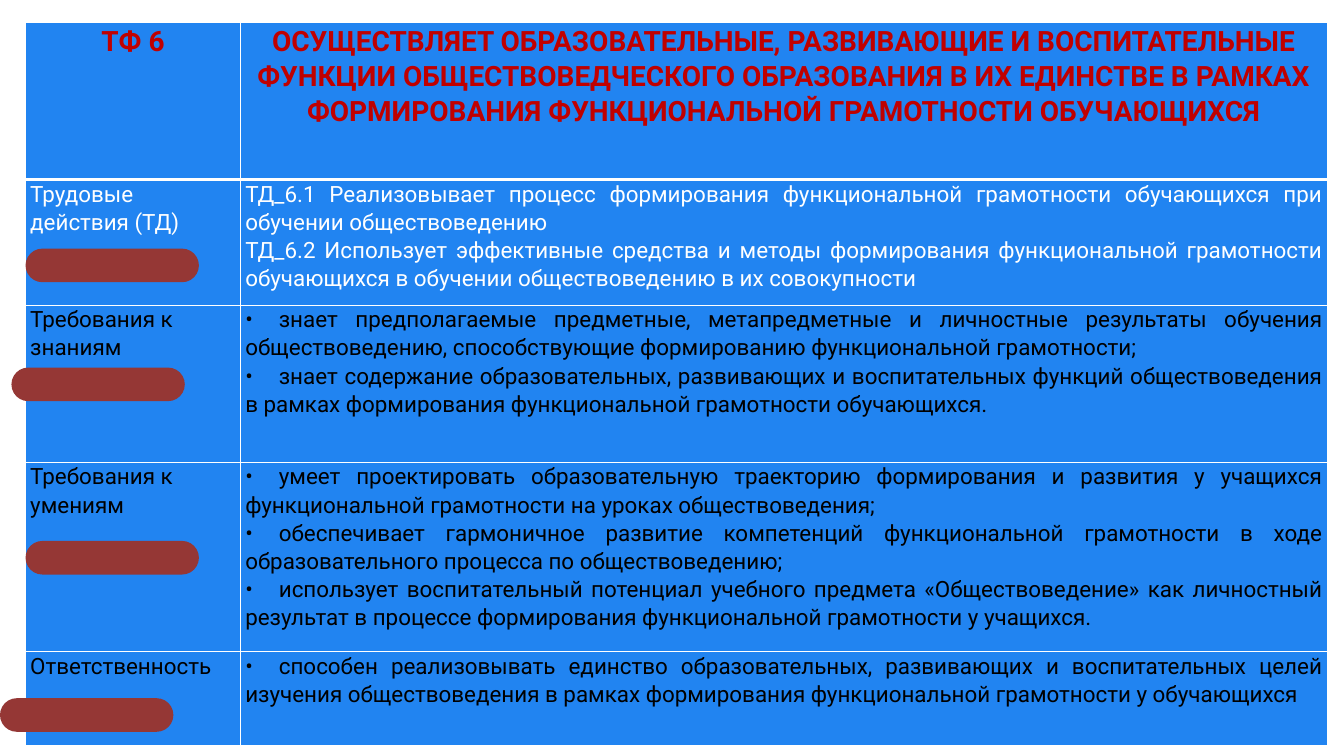
"""Build a one-slide table of the requirements for labour function 6."""
from lxml.etree import SubElement
from pptx import Presentation
from pptx.dml.color import RGBColor
from pptx.enum.shapes import MSO_SHAPE
from pptx.enum.text import PP_ALIGN
from pptx.oxml.ns import qn
from pptx.util import Inches, Pt

THEME = {
    "font": "Roboto", "head": 30, "body": 24,
    "cell": "2184F1", "line": "FFFFFF", "pill": "953735",
    "title": "C00000", "light": "FFFFFF", "dark": "000000",
}

HEAD = (
    "ТФ 6",
    "ОСУЩЕСТВЛЯЕТ ОБРАЗОВАТЕЛЬНЫЕ, РАЗВИВАЮЩИЕ И ВОСПИТАТЕЛЬНЫЕ ФУНКЦИИ "
    "ОБЩЕСТВОВЕДЧЕСКОГО ОБРАЗОВАНИЯ В ИХ ЕДИНСТВЕ В РАМКАХ ФОРМИРОВАНИЯ "
    "ФУНКЦИОНАЛЬНОЙ ГРАМОТНОСТИ ОБУЧАЮЩИХСЯ",
)
ACTIONS = ("Трудовые действия (ТД)", [
    "ТД_6.1 Реализовывает процесс формирования функциональной грамотности "
    "обучающихся при обучении обществоведению",
    "ТД_6.2 Использует эффективные средства и методы формирования функциональной "
    "грамотности обучающихся в обучении обществоведению в их совокупности",
])
REQUIREMENTS = [
    ("Требования к знаниям", [
        "знает предполагаемые предметные, метапредметные и личностные результаты обучения "
        "обществоведению, способствующие формированию функциональной грамотности;",
        "знает содержание образовательных, развивающих и воспитательных функций "
        "обществоведения в рамках формирования функциональной грамотности обучающихся.",
    ]),
    ("Требования к умениям", [
        "умеет проектировать образовательную траекторию формирования и развития у учащихся "
        "функциональной грамотности на уроках обществоведения;",
        "обеспечивает гармоничное развитие компетенций функциональной грамотности в ходе "
        "образовательного процесса по обществоведению;",
        "использует воспитательный потенциал учебного предмета «Обществоведение» как "
        "личностный результат в процессе формирования функциональной грамотности у учащихся.",
    ]),
    ("Ответственность", [
        "способен реализовывать единство образовательных, развивающих и воспитательных целей "
        "изучения обществоведения в рамках формирования функциональной грамотности у обучающихся",
    ]),
]
COLS = [3.2, 16.17]
ROWS = [2.33, 1.87, 2.34, 2.82, 1.39]
PILLS = [(0.38, 3.7), (0.38, 8.05), (0, 10.39), (0.17, 5.47)]
PILL_SIZE = (2.58, 0.5)


def rgb(name):
    """Return a theme colour."""
    return RGBColor.from_string(THEME[name])


def write(tf, paras, size="body", color="dark", bold=False, align=PP_ALIGN.LEFT):
    """Fill a text frame with one paragraph per string."""
    for i, text in enumerate(paras):
        p = tf.paragraphs[0] if i == 0 else tf.add_paragraph()
        p.alignment, p.line_spacing = align, 1.07
        r = p.add_run()
        r.text = text
        r.font.name, r.font.size, r.font.bold = THEME["font"], Pt(THEME[size]), bold
        r.font.color.rgb = rgb(color)


def style_cell(cell, bottom=1, top=1):
    """Set the margins, borders and fill of a cell."""
    cell.margin_left = cell.margin_right = Inches(0.07)
    cell.margin_top = cell.margin_bottom = 0
    tcPr = cell._tc.get_or_add_tcPr()
    for side, width in (("L", 1), ("R", 1), ("T", top), ("B", bottom)):
        ln = SubElement(tcPr, qn(f"a:ln{side}"), w=str(Pt(width)))
        fill = SubElement(ln, qn("a:solidFill"))
        SubElement(fill, qn("a:srgbClr"), val=THEME["line"])
    cell.fill.solid()
    cell.fill.fore_color.rgb = rgb("cell")


def add_grid(s):
    """Add the table with its heading, actions and requirements."""
    table = s.shapes.add_table(len(ROWS), len(COLS), Inches(0.38), Inches(0.34),
                               Inches(sum(COLS)), Inches(sum(ROWS))).table
    table.horz_banding = False
    for col, width in zip(table.columns, COLS):
        col.width = Inches(width)
    for i, (row, height) in enumerate(zip(table.rows, ROWS)):
        row.height = Inches(height)
        for cell in row.cells:
            style_cell(cell, bottom=3 if i == 0 else 1, top=3 if i == 1 else 1)
    for j, text in enumerate(HEAD):
        write(table.cell(0, j).text_frame, [text], size="head", color="title",
              bold=True, align=PP_ALIGN.CENTER)
    bulleted = [(name, [f"•\t{item}" for item in items]) for name, items in REQUIREMENTS]
    for i, (name, items) in enumerate([ACTIONS, *bulleted], 1):
        color = "light" if i == 1 else "dark"
        write(table.cell(i, 0).text_frame, [name], color=color)
        write(table.cell(i, 1).text_frame, items, color=color, align=PP_ALIGN.JUSTIFY)


def add_pill(s, x, y):
    """Add a fully rounded bar."""
    sp = s.shapes.add_shape(MSO_SHAPE.ROUNDED_RECTANGLE, *map(Inches, (x, y, *PILL_SIZE)))
    sp.adjustments[0] = 0.5
    sp.shadow.inherit = False
    sp.fill.solid()
    sp.fill.fore_color.rgb = rgb("pill")
    sp.line.fill.background()


def main():
    """Build and save the slide."""
    prs = Presentation()
    prs.slide_width, prs.slide_height = Inches(20), Inches(11.25)
    s = prs.slides.add_slide(prs.slide_layouts[6])
    add_grid(s)
    for x, y in PILLS:
        add_pill(s, x, y)
    prs.save("out.pptx")


if __name__ == "__main__":
    main()
